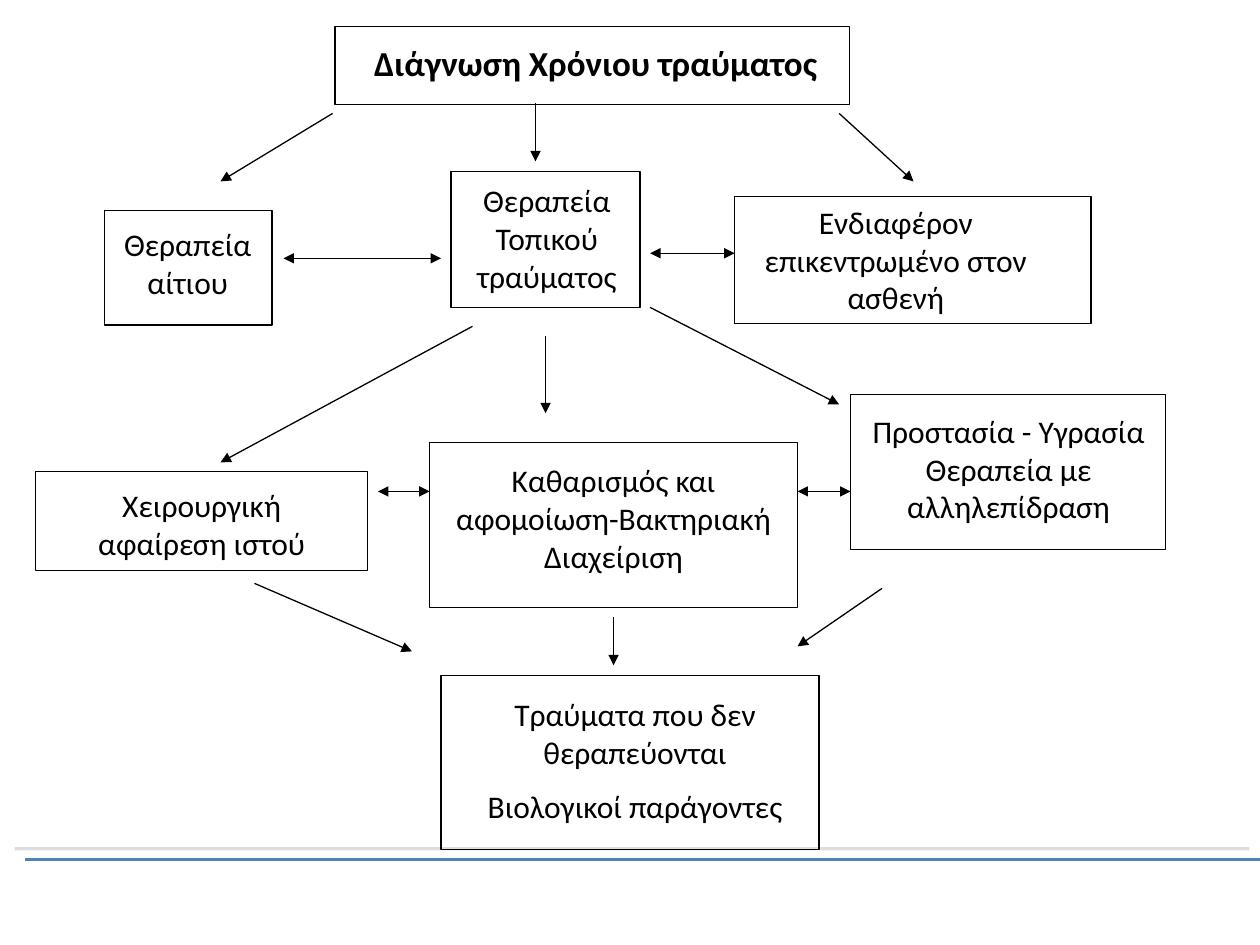
from lxml import etree
from pptx import Presentation
from pptx import util as u
from pptx.dml.color import RGBColor
from pptx.enum import shapes, text
from pptx.oxml.ns import qn

FONT, BLACK, BLUE, GREY = "Calibri", "000000", "4F81BD", "BFBFBF"
BODY_SIZE, TITLE_SIZE = 18, 20

# frame (left, top, width, height), label area (same order), paragraphs
TITLE = ((2.66, 0.21, 4.08, 0.62), (2.87, 0.28, 4.92, 0.44),
         ["Διάγνωση Χρόνιου τραύματος"])
STEPS = [
    ((0.83, 1.67, 1.33, 0.91), (0.78, 1.74, 1.42, 0.71), ["Θεραπεία αίτιου"]),
    ((3.58, 1.36, 1.5, 1.08), (3.63, 1.39, 1.42, 1.01),
     ["Θεραπεία Τοπικού τραύματος"]),
    ((5.83, 1.56, 2.83, 1.01), (5.83, 1.56, 2.56, 1.01),
     ["Ενδιαφέρον επικεντρωμένο στον ασθενή"]),
    ((0.28, 3.74, 2.64, 0.79), (0.39, 3.81, 2.42, 0.71),
     ["Χειρουργική αφαίρεση ιστού"]),
    ((3.41, 3.51, 2.92, 1.31), (3.3, 3.61, 3.14, 1.01),
     ["Καθαρισμός και αφομοίωση-Βακτηριακή Διαχείριση"]),
    ((6.75, 3.13, 2.5, 1.23), (6.76, 3.22, 2.49, 1.46),
     ["Προστασία - Υγρασία Θεραπεία με αλληλεπίδραση"]),
    ((3.5, 5.36, 3, 1.38), (3.5, 5.47, 3.08, 1.16),
     ["Τραύματα που δεν θεραπεύονται", "Βιολογικοί παράγοντες"]),
]

# start x, start y, end x, end y
ONE_WAY = [
    (2.64, 0.9, 1.75, 1.44), (4.25, 0.82, 4.25, 1.28), (6.66, 0.9, 7.25, 1.44),
    (3.75, 2.59, 1.75, 3.67), (4.33, 2.67, 4.33, 3.28), (5.16, 2.44, 6.66, 3.21),
    (2.02, 4.63, 3.27, 5.17), (4.87, 4.9, 4.87, 5.28), (7, 4.67, 6.33, 5.13),
]
TWO_WAY = [
    (2.25, 2.05, 3.5, 2.05), (5.83, 2.01, 5.16, 2.01),
    (3, 3.9, 3.41, 3.9), (6.33, 3.9, 6.75, 3.9),
]
FOOTER_RULE = (0.2, 6.82, 10, 6.82)


def color(value):
    return RGBColor.from_string(value)


def inches(values):
    return [u.Inches(value) for value in values]


def add_line(page, ends, stroke=BLACK, width=0.75, arrowheads=()):
    """Draw a straight line; return it with its effect list."""
    line = page.shapes.add_connector(shapes.MSO_CONNECTOR.STRAIGHT, *inches(ends))
    line.line.color.rgb = color(stroke)
    line.line.width = u.Pt(width)
    properties = line._element.spPr
    outline = properties.find(qn("a:ln"))
    for end in arrowheads:
        etree.SubElement(outline, qn(f"a:{end}"), type="triangle")
    return line, etree.SubElement(properties, qn("a:effectLst"))


def add_footer_rule(page):
    _, effects = add_line(page, FOOTER_RULE, BLUE, 1.75)
    shadow = etree.SubElement(effects, qn("a:outerShdw"), blurRad="0",
                              dist=str(u.Pt(8.5)), dir=str(225 * 60000))
    tint = etree.SubElement(shadow, qn("a:srgbClr"), val=GREY)
    etree.SubElement(tint, qn("a:alpha"), val="50000")


def add_step(page, frame, area, paragraphs, size=BODY_SIZE, bold=False,
             align=text.PP_ALIGN.CENTER):
    label = page.shapes.add_textbox(*inches(area)).text_frame
    label.word_wrap = True
    label.auto_size = text.MSO_AUTO_SIZE.SHAPE_TO_FIT_TEXT
    for index, wording in enumerate(paragraphs):
        para = label.add_paragraph() if index else label.paragraphs[0]
        para.alignment = align
        if index:
            para.space_before = u.Pt(size / 2)
        span = para.add_run()
        span.text = wording
        span.font.name, span.font.size = FONT, u.Pt(size)
        span.font.bold = bold
        span.font.color.rgb = color(BLACK)

    box = page.shapes.add_shape(shapes.MSO_SHAPE.RECTANGLE, *inches(frame))
    box.shadow.inherit = False
    box.fill.background()
    box.line.color.rgb = color(BLACK)
    box.line.width = u.Pt(0.75)


def main():
    deck = Presentation()
    deck.slide_width, deck.slide_height = inches((10, 7.5))
    page = deck.slides.add_slide(deck.slide_layouts[6])

    add_footer_rule(page)
    for step in STEPS:
        add_step(page, *step)
    add_step(page, *TITLE, size=TITLE_SIZE, bold=True, align=text.PP_ALIGN.LEFT)
    for ends in ONE_WAY:
        add_line(page, ends, arrowheads=("tailEnd",))
    for ends in TWO_WAY:
        add_line(page, ends, arrowheads=("headEnd", "tailEnd"))

    deck.save("out.pptx")


if __name__ == "__main__":
    main()
